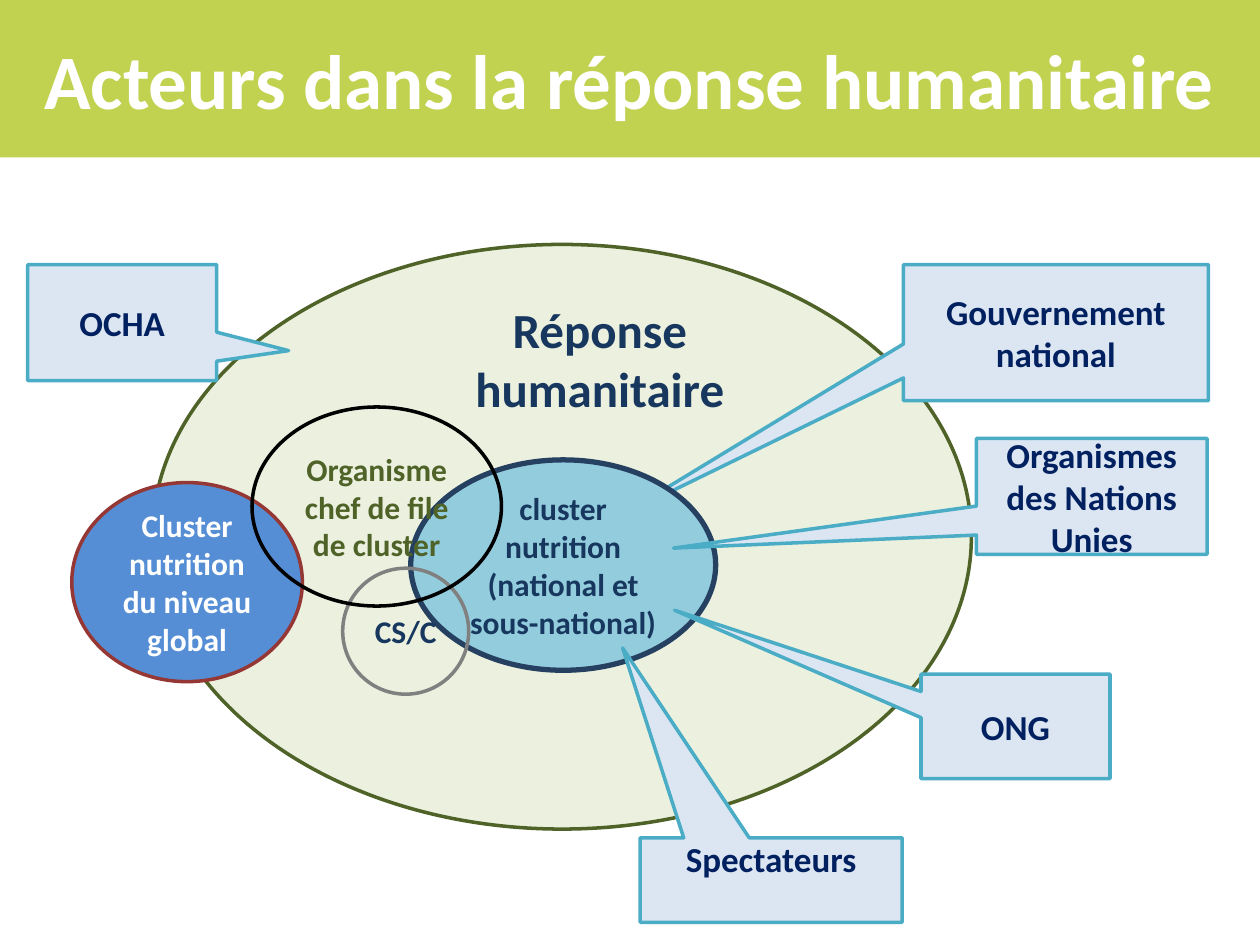
from pptx import Presentation
from pptx.dml.color import RGBColor
from pptx.enum.shapes import MSO_SHAPE
from pptx.enum.text import MSO_ANCHOR, MSO_AUTO_SIZE, PP_ALIGN
from pptx.util import Inches, Pt

COLORS = {
    "lime": "C1D150",
    "white": "FFFFFF",
    "black": "000000",
    "grey": "808080",
    "pale_green": "EBF1DE",
    "olive": "4F6228",
    "blue": "558ED5",
    "red": "953735",
    "aqua": "93CDDD",
    "dark_blue": "254061",
    "slate": "17375E",
    "pale_blue": "DCE6F2",
    "teal": "4BACC6",
    "navy": "002060",
}


def color(name):
    return RGBColor.from_string(COLORS[name])


def write_text(shape, text, size=18, ink="slate", font="Calibri",
               anchor=MSO_ANCHOR.MIDDLE, side=0.1, top=0.05):
    frame = shape.text_frame
    frame.word_wrap = True
    frame.auto_size = MSO_AUTO_SIZE.NONE
    frame.vertical_anchor = anchor
    frame.margin_left = frame.margin_right = Inches(side)
    frame.margin_top = Inches(top)
    para = frame.paragraphs[0]
    para.alignment = PP_ALIGN.CENTER
    span = para.add_run()
    span.text = text
    span.font.name = font
    span.font.size = Pt(size)
    span.font.bold = True
    span.font.color.rgb = color(ink)


class ActorsSlide:
    def __init__(self, deck):
        self.page = deck.slides.add_slide(deck.slide_layouts[5])

    def title(self, text, place):
        box = self.page.shapes.title
        box.left, box.top, box.width, box.height = map(Inches, place)
        box.fill.solid()
        box.fill.fore_color.rgb = color("lime")
        write_text(box, text, size=44, ink="white")

    def shape(self, kind, place, fill=None, line=None, weight=2):
        shape = self.page.shapes.add_shape(kind, *map(Inches, place))
        shape.shadow.inherit = False
        if fill:
            shape.fill.solid()
            shape.fill.fore_color.rgb = color(fill)
        else:
            shape.fill.background()
        if line:
            shape.line.color.rgb = color(line)
            shape.line.width = Pt(weight)
        else:
            shape.line.fill.background()
        return shape

    def ellipse(self, place, text=None, fill=None, line=None, weight=2, **style):
        shape = self.shape(MSO_SHAPE.OVAL, place, fill, line, weight)
        if text:
            write_text(shape, text, **style)

    def heading(self, text, place):
        box = self.shape(MSO_SHAPE.RECTANGLE, place, "pale_green")
        write_text(box, text, size=28, anchor=MSO_ANCHOR.TOP)

    def callout(self, text, place, tip, **style):
        box = self.shape(MSO_SHAPE.RECTANGULAR_CALLOUT, place, "pale_blue", "teal")
        box.adjustments[0], box.adjustments[1] = tip
        write_text(box, text, size=20, ink="navy", **style)


def main():
    deck = Presentation()
    deck.slide_width, deck.slide_height = Inches(10), Inches(7.5)
    slide = ActorsSlide(deck)

    slide.title("Acteurs dans la réponse humanitaire", (0, 0, 10, 1.25))
    slide.ellipse((1.21, 1.94, 6.5, 4.64), fill="pale_green", line="olive")
    slide.heading("Réponse humanitaire", (3.5, 2.33, 2.52, 1.12))
    slide.ellipse((0.57, 3.83, 1.83, 1.58), "Cluster nutrition du niveau global",
                  fill="blue", line="red", ink="white")
    slide.callout("Gouvernement national", (7.17, 2.1, 2.42, 1.08), (-1.433, 1.354))
    slide.callout("OCHA", (0.22, 2.1, 1.5, 0.92), (0.881, 0.242))
    slide.ellipse((3.26, 3.65, 2.42, 1.67),
                  "cluster nutrition (national et sous-national)",
                  fill="aqua", line="dark_blue", weight=3)
    slide.callout("ONG", (7.31, 5.35, 1.5, 0.83), (-1.804, -1.111))
    slide.callout("Organismes des Nations Unies", (7.75, 3.48, 1.83, 0.92),
                  (-1.814, 0.446))
    slide.ellipse((2.72, 4.51, 1, 1), "CS/C", line="grey", side=0)
    slide.callout("Spectateurs", (5.08, 6.65, 2.08, 0.67), (-0.567, -2.75),
                  anchor=MSO_ANCHOR.TOP, top=0)
    slide.ellipse((2, 3.23, 1.98, 1.58), "Organisme chef de file de cluster",
                  line="black", ink="olive")

    deck.save("out.pptx")


if __name__ == "__main__":
    main()
